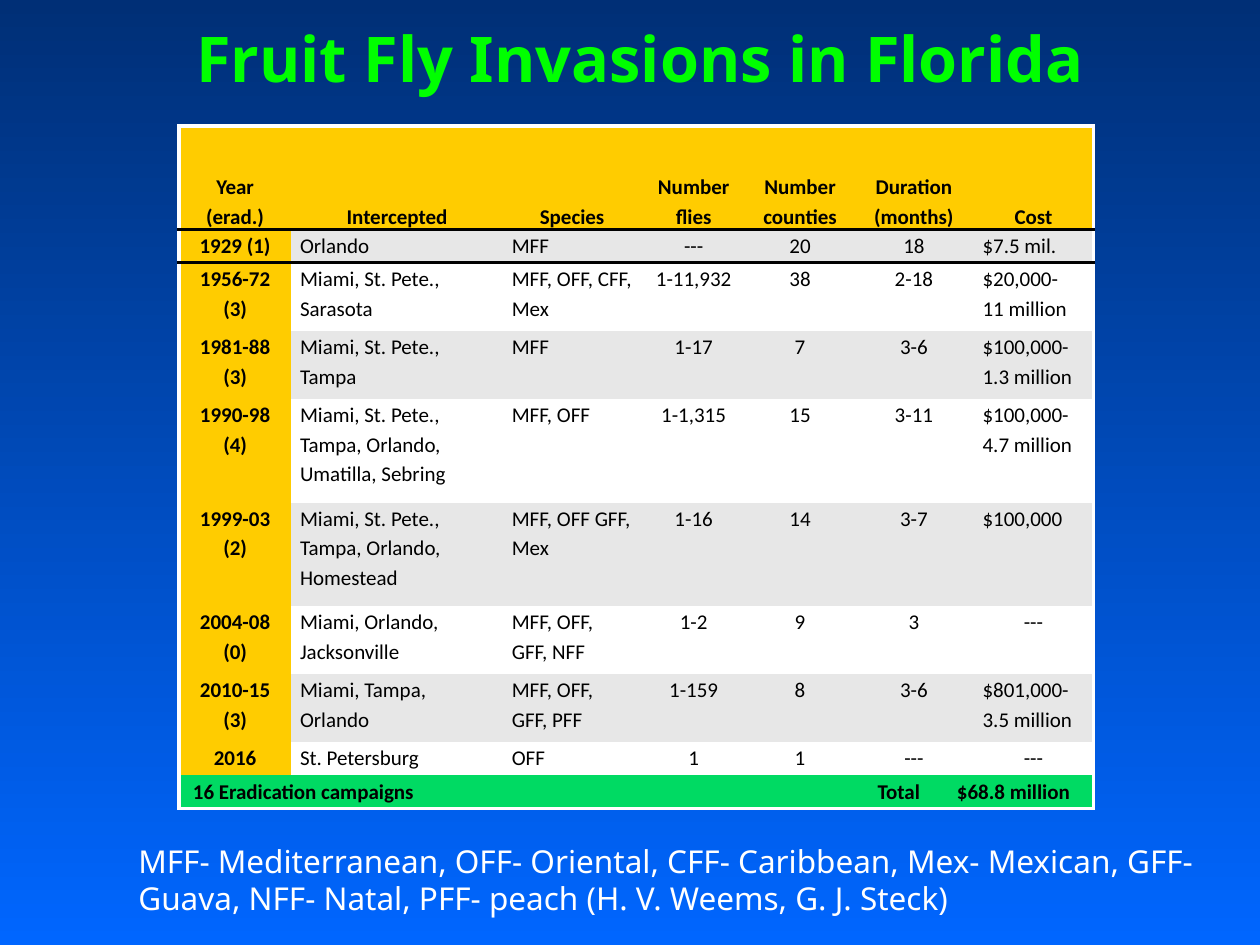
from lxml.etree import SubElement as Sub
from pptx import Presentation
from pptx.dml.color import RGBColor as Rgb
from pptx.enum.text import MSO_ANCHOR as Anchor, PP_ALIGN as Align
from pptx.oxml.ns import qn
from pptx.util import Cm, Pt

# Content: a line break in a cell starts a new paragraph
TITLE = "Fruit Fly Invasions in Florida"
NOTE = ("MFF- Mediterranean, OFF- Oriental, CFF- Caribbean, Mex- Mexican, "
        "GFF- Guava, NFF- Natal, PFF- peach (H. V. Weems, G. J. Steck)")
HEAD = ["Year (erad.)", "Intercepted", "Species", "Number flies",
        "Number\ncounties", "Duration (months)", "Cost"]
ROWS = [
    ["1929 (1)", "Orlando", "MFF", "---", "20", "18", "$7.5 mil."],
    ["1956-72\n(3)", "Miami, St. Pete., Sarasota", "MFF, OFF, CFF, Mex",
     "1-11,932", "38", "2-18", "$20,000-\n11 million"],
    ["1981-88\n(3)", "Miami, St. Pete., Tampa", "MFF",
     "1-17", "7", "3-6", "$100,000-1.3 million"],
    ["1990-98\n(4)", "Miami, St. Pete., Tampa, Orlando,\nUmatilla, Sebring",
     "MFF, OFF", "1-1,315", "15", "3-11", "$100,000-4.7 million"],
    ["1999-03\n(2)", "Miami, St. Pete., Tampa, Orlando, Homestead",
     "MFF, OFF GFF, Mex", "1-16", "14", "3-7", "$100,000"],
    ["2004-08\n(0)", "Miami, Orlando, Jacksonville", "MFF, OFF, GFF, NFF",
     "1-2", "9", "3", "---"],
    ["2010-15\n(3)", "Miami, Tampa, Orlando", "MFF, OFF, GFF, PFF",
     "1-159", "8", "3-6", "$801,000-3.5 million"],
    ["2016", "St. Petersburg", "OFF", "1", "1", "---", "---"],
]
TOTAL = ["16 Eradication campaigns", "Total", "$68.8 million"]

# Look
COLORS = {"top": "002F76", "base": "0066FF", "title": "00FF00",
          "white": "FFFFFF", "black": "000000", "gold": "FFCC00",
          "gray": "E7E7E7", "green": "00DA63"}
WIDTHS = [2.26, 4.27, 2.79, 2.11, 2.18, 2.41, 2.41]
SHORT, MID, TALL = 0.67, 1.37, 2.09
HEIGHTS = [TALL, SHORT, MID, MID, TALL, TALL, MID, MID, SHORT, SHORT]
MIDDLE = {0, 3, 4, 5}
TABS = [13.8, 15.4]
PLAIN = "{2D5ABB26-0587-4C30-8999-92F81FD0307C}"


def color(name):
    return Rgb.from_string(COLORS[name])


def write(para, text, size, font, tint, bold=False):
    run = para.add_run()
    run.text = text
    run.font.size, run.font.name, run.font.bold = Pt(size), font, bold
    run.font.color.rgb = color(tint)


def add_text(slide, box, text, size, tint, bold, align, anchor):
    frame = slide.shapes.add_textbox(*map(Cm, box)).text_frame
    frame.word_wrap = True
    frame.vertical_anchor = anchor
    para = frame.paragraphs[0]
    para.alignment = align
    write(para, text, size, "Noto Sans", tint, bold)


def add_edge(cell, side, tint, width):
    line = Sub(cell._tc.get_or_add_tcPr(), qn(f"a:ln{side}"), w=str(Pt(width)))
    Sub(Sub(line, qn("a:solidFill")), qn("a:srgbClr"), val=COLORS[tint])


def style(cell, row, col, fill):
    cell.margin_left = cell.margin_right = Cm(0.18)
    cell.margin_top = cell.margin_bottom = 0
    cell.vertical_anchor = Anchor.BOTTOM if row == 0 else Anchor.TOP
    # Borders go before the fill
    edges = [("L", col == 0, "white", 2.25),
             ("R", col == len(WIDTHS) - 1, "white", 2.25),
             ("T", row == 0, "white", 2.25),
             ("T", row == 1, "black", 2),
             ("B", row == 0, "black", 2),
             ("B", row == len(HEIGHTS) - 1, "white", 2.25)]
    for side, shown, tint, width in edges:
        if shown:
            add_edge(cell, side, tint, width)
    cell.fill.solid()
    cell.fill.fore_color.rgb = color(fill)


def fill_cell(cell, text, bold, align):
    frame = cell.text_frame
    for i, part in enumerate(text.split("\n")):
        para = frame.add_paragraph() if i else frame.paragraphs[0]
        para.alignment = align
        para.line_spacing = 1.15
        write(para, part, 12, "Calibri", "black", bold)


def add_grid(slide):
    grid = slide.shapes.add_table(len(HEIGHTS), len(WIDTHS), Cm(3.61), Cm(2.54),
                                  Cm(sum(WIDTHS)), Cm(sum(HEIGHTS))).table
    grid.first_row = grid.horz_banding = False
    grid._tbl.tblPr.find(qn("a:tableStyleId")).text = PLAIN
    for col, width in zip(grid.columns, WIDTHS):
        col.width = Cm(width)
    for row, height in zip(grid.rows, HEIGHTS):
        row.height = Cm(height)

    # Header and yearly rows
    for r, texts in enumerate([HEAD] + ROWS):
        for c, text in enumerate(texts):
            label = r == 0 or c == 0
            fill = "gold" if label else "gray" if r % 2 else "white"
            mid = label or c in MIDDLE or text == "---"
            style(grid.cell(r, c), r, c, fill)
            fill_cell(grid.cell(r, c), text, label,
                      Align.CENTER if mid else Align.LEFT)

    # Total row: one merged cell with tab stops
    last = len(HEIGHTS) - 1
    for c in range(len(WIDTHS)):
        style(grid.cell(last, c), last, c, "green")
    cell = grid.cell(last, 0)
    cell.merge(grid.cell(last, len(WIDTHS) - 1))
    add_edge(cell, "R", "white", 2.25)
    props = cell._tc.tcPr
    props.insert(1, props[-1])
    cell.margin_left = Cm(0.28)
    fill_cell(cell, "\t".join(TOTAL), True, Align.LEFT)
    stops = Sub(cell.text_frame.paragraphs[0]._p.get_or_add_pPr(), qn("a:tabLst"))
    for stop in TABS:
        Sub(stops, qn("a:tab"), pos=str(Cm(stop)), algn="l")


def main():
    deck = Presentation()
    deck.slide_width, deck.slide_height = Cm(25.4), Cm(19.05)
    slide = deck.slides.add_slide(deck.slide_layouts[6])

    # Background, dark at the top
    back = slide.background.fill
    back.gradient()
    back.gradient_angle = 270
    for stop, name in zip(back.gradient_stops, ("top", "base")):
        stop.color.rgb = color(name)

    add_text(slide, (1.47, -0.43, 22.86, 3.18), TITLE, 36, "title", True,
             Align.CENTER, Anchor.MIDDLE)
    add_text(slide, (2.54, 16.84, 21.79, 1.8), NOTE, 18, "white", False,
             Align.LEFT, Anchor.TOP)
    add_grid(slide)
    deck.save("out.pptx")


if __name__ == "__main__":
    main()
